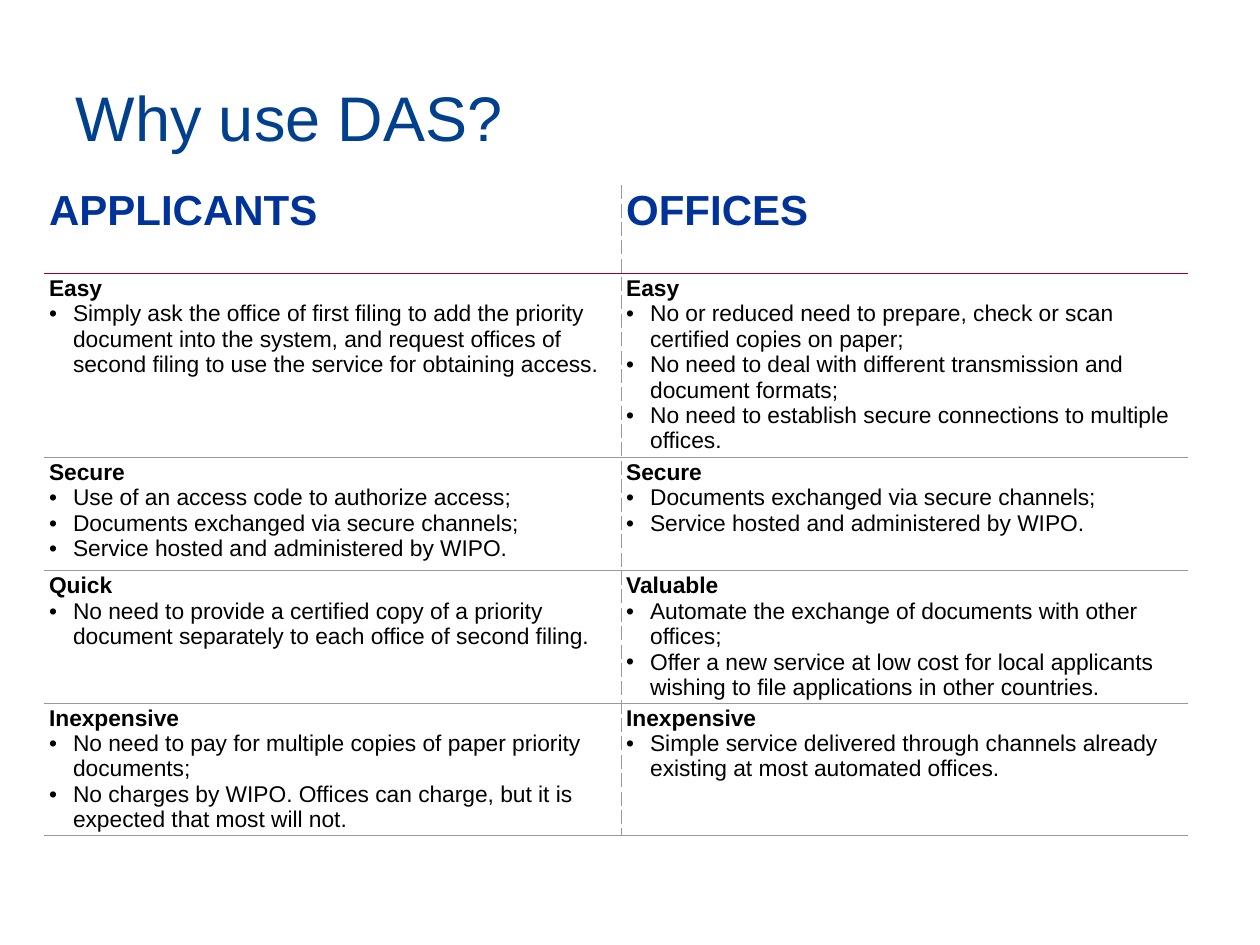
from dataclasses import dataclass

from lxml.etree import SubElement
from pptx import Presentation
from pptx.dml.color import RGBColor
from pptx.enum.text import MSO_ANCHOR, PP_ALIGN
from pptx.oxml.ns import qn
from pptx.util import Inches, Pt


@dataclass(frozen=True)
class Theme:
    font: str = "Arial"
    title_color: str = "00408C"
    heading_color: str = "003399"
    text_color: str = "000000"
    rule_color: str = "999999"
    header_rule_color: str = "990033"
    title_size: float = 36
    heading_size: float = 24
    text_size: float = 13
    rule_width: float = 0.75


HEADINGS = ("APPLICANTS", "OFFICES")
COLUMN_WIDTHS = (4.58, 4.5)
ROW_HEIGHTS = (0.7, 1.46, 0.9, 1.05, 1.05)
BENEFITS = [
    (
        ("Easy",
         "Simply ask the office of first filing to add the priority document into the system, "
         "and request offices of second filing to use the service for obtaining access."),
        ("Easy",
         "No or reduced need to prepare, check or scan certified copies on paper;",
         "No need to deal with different transmission and document formats;",
         "No need to establish secure connections to multiple offices."),
    ),
    (
        ("Secure",
         "Use of an access code to authorize access;",
         "Documents exchanged via secure channels;",
         "Service hosted and administered by WIPO."),
        ("Secure",
         "Documents exchanged via secure channels;",
         "Service hosted and administered by WIPO."),
    ),
    (
        ("Quick",
         "No need to provide a certified copy of a priority document separately to each "
         "office of second filing."),
        ("Valuable",
         "Automate the exchange of documents with other offices;",
         "Offer a new service at low cost for local applicants wishing to file applications "
         "in other countries."),
    ),
    (
        ("Inexpensive",
         "No need to pay for multiple copies of paper priority documents;",
         "No charges by WIPO. Offices can charge, but it is expected that most will not."),
        ("Inexpensive",
         "Simple service delivered through channels already existing at most automated offices."),
    ),
]


class SlideBuilder:
    def __init__(self, deck, theme):
        self.theme = theme
        self.page = deck.slides.add_slide(deck.slide_layouts[5])

    def style(self, paragraph, size, color, bold=False):
        for span in paragraph.runs:
            span.font.name = self.theme.font
            span.font.size = Pt(size)
            span.font.bold = bold
            span.font.color.rgb = RGBColor.from_string(color)

    def title(self, text, left, top, width, height):
        box = self.page.shapes.title
        box.left, box.top = Inches(left), Inches(top)
        box.width, box.height = Inches(width), Inches(height)
        frame = box.text_frame
        frame.text = text
        frame.vertical_anchor = MSO_ANCHOR.MIDDLE
        frame.paragraphs[0].alignment = PP_ALIGN.LEFT
        self.style(frame.paragraphs[0], self.theme.title_size, self.theme.title_color)

    def bullet(self, paragraph, indent=0.19):
        properties = paragraph._p.get_or_add_pPr()
        properties.set("marL", str(Inches(indent)))
        properties.set("indent", str(-Inches(indent)))
        SubElement(properties, qn("a:buFont"), typeface=self.theme.font)
        SubElement(properties, qn("a:buChar"), char="•")

    def borders(self, cell, edges):
        """Draw edges given as {tag: (color, dash)}; a color of None hides the edge."""
        properties = cell._tc.get_or_add_tcPr()
        for position, tag in enumerate(("lnL", "lnR", "lnT", "lnB")):
            color, dash = edges.get(tag, (None, None))
            line = SubElement(properties, qn(f"a:{tag}"), w=str(Pt(self.theme.rule_width)))
            properties.insert(position, line)
            if color is None:
                SubElement(line, qn("a:noFill"))
                continue
            fill = SubElement(line, qn("a:solidFill"))
            SubElement(fill, qn("a:srgbClr"), val=color)
            SubElement(line, qn("a:prstDash"), val=dash)

    def fill_cell(self, cell, lines, is_header):
        theme = self.theme
        cell.margin_left = cell.margin_right = Inches(0.04)
        cell.margin_top = cell.margin_bottom = Inches(0.02)
        cell.vertical_anchor = MSO_ANCHOR.TOP
        cell.fill.background()
        cell.text_frame.text = "\n".join(lines)
        size = theme.heading_size if is_header else theme.text_size
        color = theme.heading_color if is_header else theme.text_color
        for index, paragraph in enumerate(cell.text_frame.paragraphs):
            if index:
                self.bullet(paragraph)
            self.style(paragraph, size, color, bold=index == 0)

    def comparison_table(self, headings, rows, left, top, widths, heights):
        theme = self.theme
        contents = [[(heading,) for heading in headings], *rows]
        table = self.page.shapes.add_table(
            len(contents), len(widths), Inches(left), Inches(top),
            Inches(sum(widths)), Inches(sum(heights))).table
        table.first_row = table.horz_banding = False
        for column, width in zip(table.columns, widths):
            column.width = Inches(width)
        for row, height in zip(table.rows, heights):
            row.height = Inches(height)

        rule = (theme.rule_color, "solid")
        header_rule = (theme.header_rule_color, "solid")
        for row_index, row in enumerate(contents):
            for column_index, lines in enumerate(row):
                cell = table.cell(row_index, column_index)
                self.fill_cell(cell, lines, is_header=row_index == 0)
                edges = {"lnB": rule if row_index else header_rule}
                if row_index:
                    edges["lnT"] = header_rule if row_index == 1 else rule
                edges["lnL" if column_index else "lnR"] = (theme.rule_color, "dash")
                self.borders(cell, edges)


def main():
    deck = Presentation()
    deck.slide_width, deck.slide_height = Inches(10), Inches(7.5)
    builder = SlideBuilder(deck, Theme())
    builder.title("Why use DAS?", 0.5, 0.3, 9, 1.25)
    builder.comparison_table(HEADINGS, BENEFITS, 0.35, 1.47, COLUMN_WIDTHS, ROW_HEIGHTS)
    deck.save("out.pptx")


if __name__ == "__main__":
    main()
